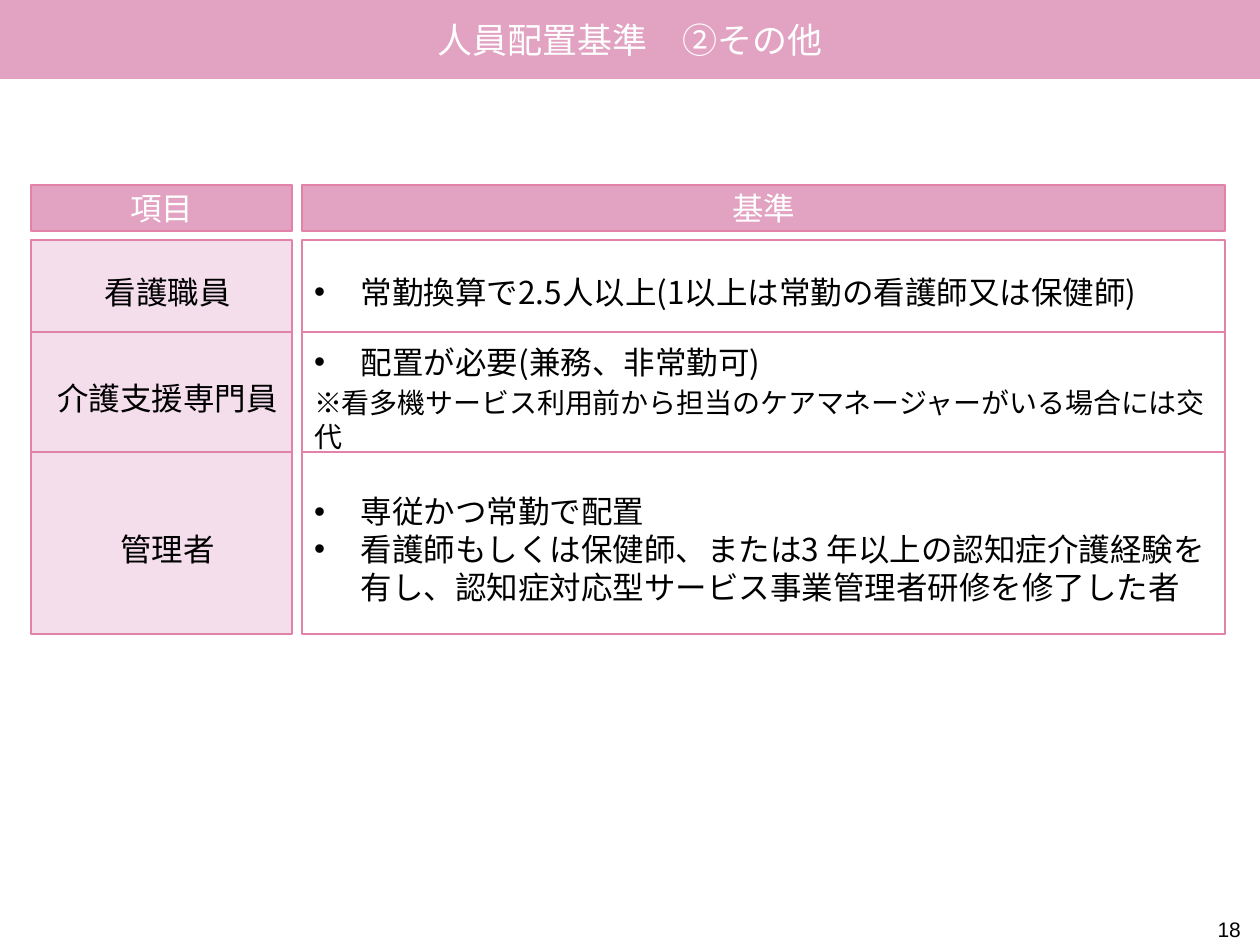
from lxml.etree import SubElement as Sub
from pptx import Presentation as Deck
from pptx.dml.color import RGBColor as RGB
from pptx.enum.shapes import MSO_SHAPE as Shape
from pptx.enum.text import MSO_ANCHOR as Anchor, MSO_AUTO_SIZE as Fit, PP_ALIGN as Align
from pptx.oxml.ns import qn
from pptx.util import Pt

SCALE = 914400 / 126  # EMU in one px
WIDE, HIGH = 1260, 945

PINK = RGB(0xE2, 0xA3, 0xC2)
PALE = RGB(0xF5, 0xDE, 0xEC)
EDGE = RGB(0xE2, 0x82, 0xA8)
WHITE = RGB(0xFF, 0xFF, 0xFF)
BLACK = RGB(0, 0, 0)

SANS = "Noto Sans CJK JP"
HEAD = {"size": 18, "color": WHITE, "align": Align.CENTER}
LABEL = {"size": 18, "color": BLACK, "align": Align.CENTER}
POINT = {"size": 18, "color": BLACK, "align": Align.LEFT, "bullet": True}
NOTE = {"size": 16, "color": BLACK, "align": Align.LEFT, "before": 3}
TITLE = {**HEAD, "size": 20}
PAGE = {"size": 12, "color": BLACK, "align": Align.RIGHT, "font": "Arial"}

# Columns as left and width; rows stack down from TOP
COLS = [(31, 261), (302, 923)]
HEAD_TOP, HEAD_HIGH, TOP = 185, 46, 240
PAD = 12
HANG = 47

ROWS = [
    (92, "看護職員", [
        ("常勤換算で2.5人以上(1以上は常勤の看護師又は保健師)", POINT)]),
    (120, "介護支援専門員", [
        ("配置が必要(兼務、非常勤可)", POINT),
        ("※看多機サービス利用前から担当のケアマネージャーがいる場合には交代", NOTE)]),
    (182, "管理者", [
        ("専従かつ常勤で配置", POINT),
        ("看護師もしくは保健師、または3 年以上の認知症介護経験を有し、"
         "認知症対応型サービス事業管理者研修を修了した者", POINT)]),
]


def px(num):
    return round(num * SCALE)


def add_bullet(para):
    props = para._p.get_or_add_pPr()
    props.set("marL", str(px(HANG)))
    props.set("indent", str(-px(HANG)))
    Sub(props, qn("a:buFont"), typeface="Arial")
    Sub(props, qn("a:buChar"), char="•")


def add_para(para, text, look):
    para.alignment = look["align"]
    para.space_before = Pt(look.get("before", 0))
    if look.get("bullet"):
        add_bullet(para)
    run = para.add_run()
    run.text = text
    name = look.get("font", SANS)
    format = {"size": Pt(look["size"]), "name": name}
    for key, value in format.items():
        setattr(run.font, key, value)
    run.font.color.rgb = look["color"]
    Sub(run._r.get_or_add_rPr(), qn("a:ea"), typeface=name)


def fill_text(frame, lines, pad=0, wrap=True):
    format = {"margin_left": px(pad), "margin_top": px(pad),
              "margin_right": 0, "margin_bottom": 0,
              "vertical_anchor": Anchor.MIDDLE, "word_wrap": wrap}
    for key, value in format.items():
        setattr(frame, key, value)
    for i, (text, look) in enumerate(lines):
        para = frame.add_paragraph() if i else frame.paragraphs[0]
        add_para(para, text, look)


def add_box(slide, area, fill, lines, pad=0, edge=EDGE):
    box = slide.shapes.add_shape(Shape.RECTANGLE, *map(px, area))
    box.shadow.inherit = False
    box.fill.solid()
    box.fill.fore_color.rgb = fill
    if edge is None:
        box.line.fill.background()
    else:
        box.line.color.rgb = edge
        box.line.width = Pt(0.75)
    fill_text(box.text_frame, lines, pad)


def add_page(slide, text):
    box = slide.shapes.add_textbox(*map(px, (1216, 917, 25, 25)))
    fill_text(box.text_frame, [(text, PAGE)], wrap=False)
    box.text_frame.auto_size = Fit.SHAPE_TO_FIT_TEXT


def main():
    deck = Deck()
    deck.slide_width, deck.slide_height = px(WIDE), px(HIGH)
    slide = deck.slides.add_slide(deck.slide_layouts[6])

    # Title band
    add_box(slide, (0, 0, WIDE, 79), PINK,
            [("人員配置基準　②その他", TITLE)], edge=None)

    # Column heads
    for (left, wide), text in zip(COLS, ("項目", "基準")):
        add_box(slide, (left, HEAD_TOP, wide, HEAD_HIGH), PINK, [(text, HEAD)])

    # Rows: item on the left, standard on the right
    top = TOP
    for high, item, rules in ROWS:
        cells = (PALE, [(item, LABEL)]), (WHITE, rules)
        for (left, wide), (fill, lines) in zip(COLS, cells):
            add_box(slide, (left, top, wide, high), fill, lines, PAD)
        top += high

    # Page number
    add_page(slide, "18")
    deck.save("out.pptx")


if __name__ == "__main__":
    main()
